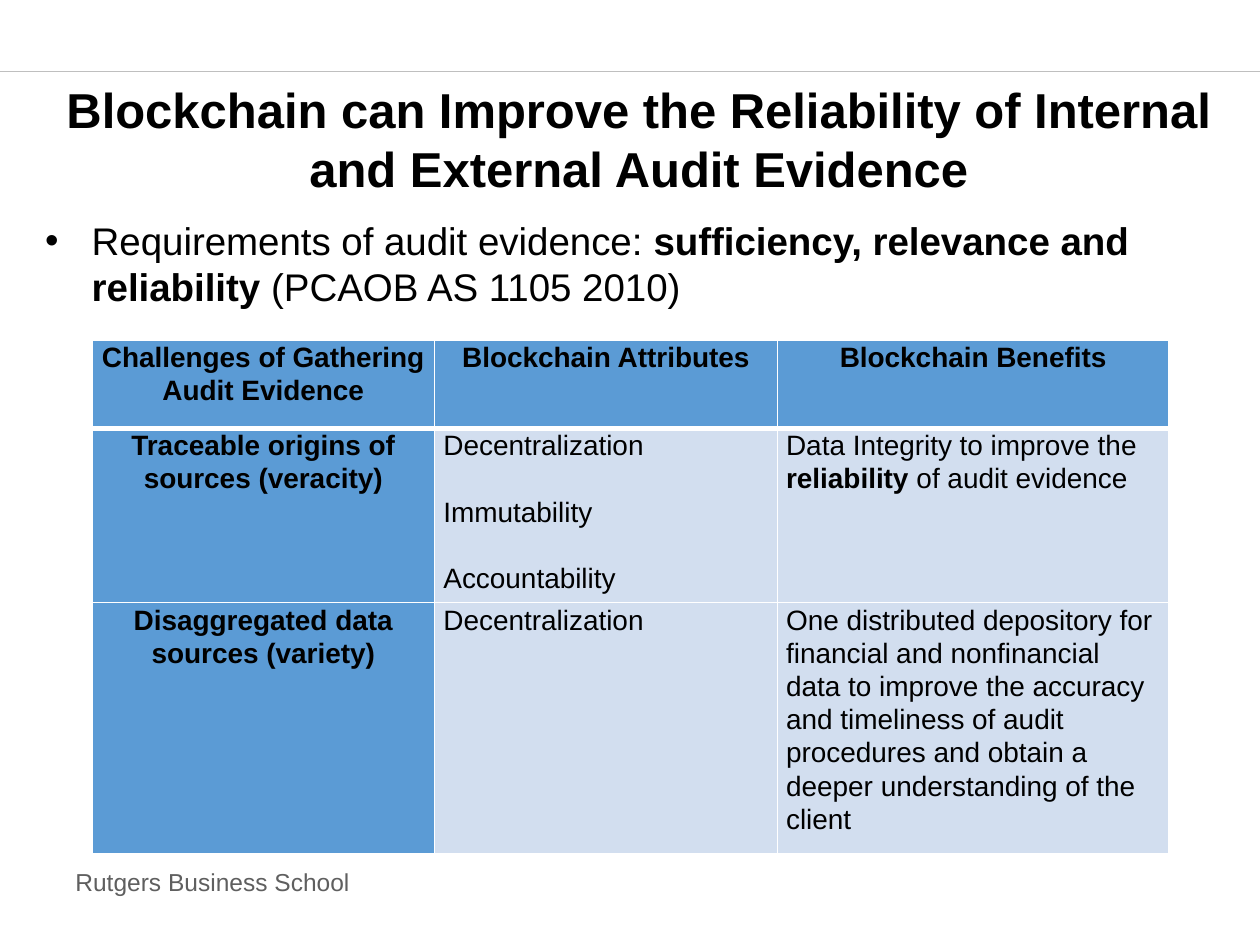
from pptx import Presentation
from pptx.dml.color import RGBColor
from pptx.enum.shapes import MSO_CONNECTOR
from pptx.enum.text import MSO_ANCHOR, PP_ALIGN
from pptx.oxml import parse_xml
from pptx.oxml.ns import nsdecls
from pptx.util import Inches, Pt

LEFT, CENTER, JUSTIFY = PP_ALIGN.LEFT, PP_ALIGN.CENTER, PP_ALIGN.JUSTIFY
TOP, MIDDLE = MSO_ANCHOR.TOP, MSO_ANCHOR.MIDDLE
STRAIGHT = MSO_CONNECTOR.STRAIGHT

BLACK, WHITE, GRAY, RULE = "000000", "FFFFFF", "5F5F5F", "BFBFBF"
BLUE, PALE = "5B9BD5", "D2DEEF"

TITLE = "Blockchain can Improve the Reliability of Internal and External Audit Evidence"
REQUIREMENTS = [
    ("Requirements of audit evidence: ", False),
    ("sufficiency, relevance and reliability ", True),
    ("(PCAOB AS 1105 2010)", False),
]
COLUMN_WIDTHS = [2.72, 2.72, 3.11]
ROW_HEIGHTS = [0.7, 1.32, 1.91]
HEADERS = [
    ["Challenges of Gathering ", "Audit Evidence"],
    ["Blockchain Attributes"],
    ["Blockchain Benefits"],
]
ROWS = [
    (
        "Traceable origins of sources (veracity)",
        ["Decentralization", "Immutability", "Accountability"],
        [
            ("Data Integrity to improve the ", False),
            ("reliability ", True),
            ("of audit evidence", False),
        ],
    ),
    (
        "Disaggregated data sources (variety)",
        ["Decentralization"],
        [
            (
                "One distributed depository for financial and nonfinancial data "
                "to improve the accuracy and timeliness of audit procedures and "
                "obtain a deeper understanding of the client",
                False,
            )
        ],
    ),
]


def color(value):
    return RGBColor.from_string(value)


class SlideBuilder:
    """Holds the text style and the current slide, and adds elements to it."""

    font = "Arial"
    cell_size = 16
    cell_gap = 19

    def __init__(self, slide):
        self.slide = slide

    def add_spans(self, para, spans, size, ink=BLACK, align=LEFT):
        para.alignment = align
        for text, bold in spans:
            span = para.add_run()
            span.text = text
            span.font.name = self.font
            span.font.size = Pt(size)
            span.font.bold = bold
            span.font.color.rgb = color(ink)

    def text(self, left, top, width, height, spans, size,
             ink=BLACK, align=LEFT, anchor=TOP, bullet=False):
        box = self.slide.shapes.add_textbox(
            Inches(left), Inches(top), Inches(width), Inches(height))
        frame = box.text_frame
        frame.word_wrap = True
        frame.vertical_anchor = anchor
        para = frame.paragraphs[0]
        if bullet:
            props = para._p.get_or_add_pPr()
            props.set("marL", str(Inches(0.37)))
            props.set("indent", str(Inches(-0.37)))
            props.append(parse_xml(f'<a:buFont {nsdecls("a")} typeface="{self.font}"/>'))
            props.append(parse_xml(f'<a:buChar {nsdecls("a")} char="•"/>'))
        self.add_spans(para, spans, size, ink, align)

    def rule(self, top, width):
        line = self.slide.shapes.add_connector(
            STRAIGHT, Inches(0), Inches(top), Inches(width), Inches(top))
        line.line.color.rgb = color(RULE)
        line.line.width = Pt(0.75)
        line._element.spPr.append(parse_xml(f'<a:effectLst {nsdecls("a")}/>'))

    def table(self, left, top, widths, heights):
        frame = self.slide.shapes.add_table(
            len(heights), len(widths), Inches(left), Inches(top),
            Inches(sum(widths)), Inches(sum(heights)))
        for column, width in zip(frame.table.columns, widths):
            column.width = Inches(width)
        for row, height in zip(frame.table.rows, heights):
            row.height = Inches(height)
        return frame.table

    def cell(self, cell, paragraphs, fill, align=LEFT, gap=0, top=1, bottom=1):
        cell.margin_left = cell.margin_right = Inches(0.07)
        cell.margin_top = cell.margin_bottom = Inches(0)
        frame = cell.text_frame
        for index, spans in enumerate(paragraphs):
            para = frame.add_paragraph() if index else frame.paragraphs[0]
            para.line_spacing = 1.07
            if index and gap:
                para.space_before = Pt(gap)
            self.add_spans(para, spans, self.cell_size, align=align)
        props = cell._tc.get_or_add_tcPr()
        for side, width in (("L", 1), ("R", 1), ("T", top), ("B", bottom)):
            props.append(parse_xml(
                f'<a:ln{side} {nsdecls("a")} w="{Pt(width)}"><a:solidFill>'
                f'<a:srgbClr val="{WHITE}"/></a:solidFill></a:ln{side}>'))
        cell.fill.solid()
        cell.fill.fore_color.rgb = color(fill)


def main():
    deck = Presentation()
    deck.slide_width, deck.slide_height = Inches(10), Inches(7.5)
    page = SlideBuilder(deck.slides.add_slide(deck.slide_layouts[6]))

    page.text(0.5, 6.83, 2.5, 0.34, [("Rutgers Business School", False)], 14, GRAY)
    page.rule(0.57, 10)
    page.text(0.2, 0.66, 9.74, 0.88, [(TITLE, True)], 28, align=CENTER, anchor=MIDDLE)
    page.text(0.26, 1.67, 9.74, 0.88, REQUIREMENTS, 22, bullet=True)

    table = page.table(0.73, 2.7, COLUMN_WIDTHS, ROW_HEIGHTS)
    for column, lines in enumerate(HEADERS):
        page.cell(table.cell(0, column), [[(line, True)] for line in lines],
                  BLUE, CENTER, bottom=3)
    for row, (challenge, attributes, benefit) in enumerate(ROWS, start=1):
        top = 3 if row == 1 else 1
        page.cell(table.cell(row, 0), [[(challenge, True)]], BLUE, CENTER, top=top)
        page.cell(table.cell(row, 1), [[(name, False)] for name in attributes],
                  PALE, JUSTIFY, page.cell_gap, top=top)
        page.cell(table.cell(row, 2), [benefit], PALE, top=top)

    deck.save("out.pptx")


if __name__ == "__main__":
    main()
